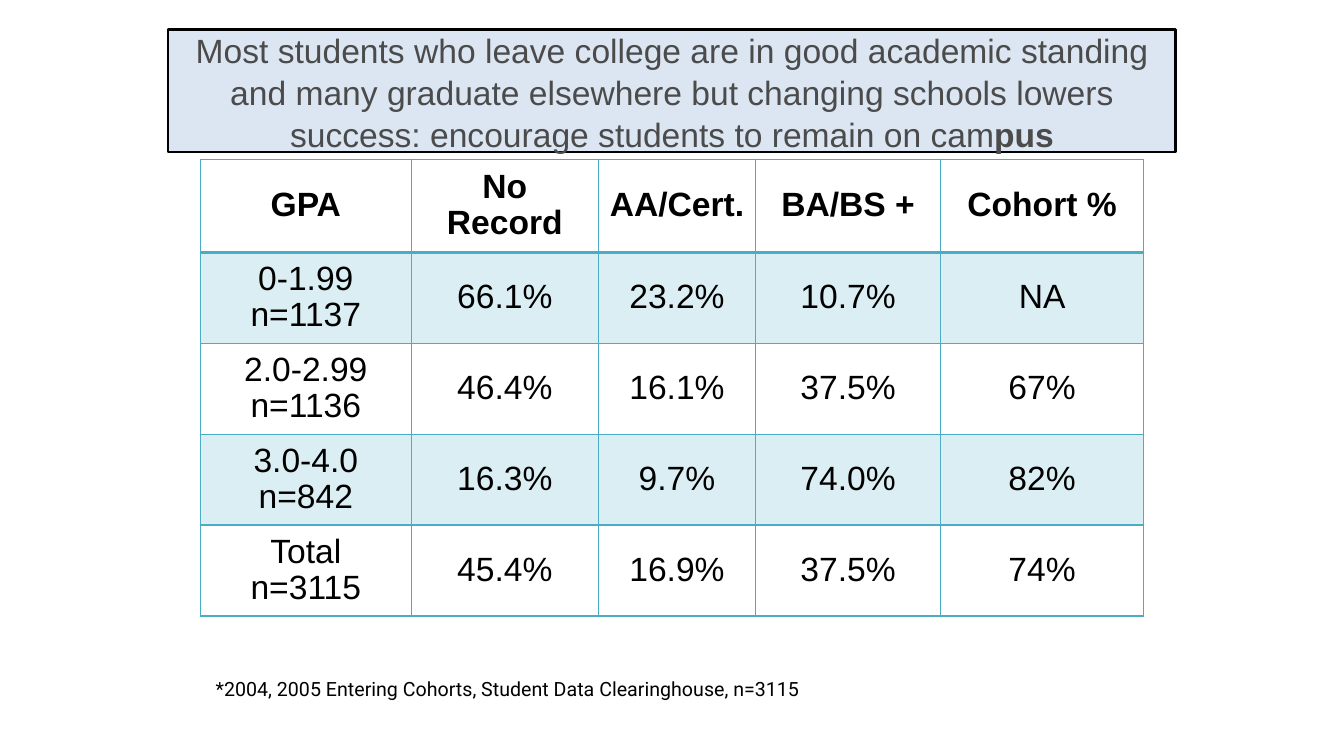
from dataclasses import dataclass

from pptx import Presentation
from pptx import util as u
from pptx.dml.color import RGBColor
from pptx.enum import shapes, text
from pptx.oxml import parse_xml
from pptx.oxml.ns import nsdecls


@dataclass(frozen=True)
class Theme:
    banner: str = "DCE6F2"
    banner_text: str = "4B4B4B"
    ink: str = "000000"
    accent: str = "4BACC6"
    band_alpha: int = 20000
    main_font: str = "Arial"
    note_font: str = "Roboto"
    main_size: int = 24
    note_size: int = 14


theme = Theme()


def add_span(para, words, **formats):
    span = para.add_run()
    span.text = words
    values = {"name": theme.main_font, "size": u.Pt(theme.main_size), "bold": False}
    color = formats.pop("color", theme.ink)
    for name, value in {**values, **formats}.items():
        setattr(span.font, name, value)
    span.font.color.rgb = RGBColor.from_string(color)


def add_border(cell, side, width):
    """Draw one side of a cell: L, R, T or B."""
    cell._tc.get_or_add_tcPr().append(parse_xml(
        f'<a:ln{side} {nsdecls("a")} w="{u.Pt(width)}"><a:solidFill>'
        f'<a:srgbClr val="{theme.accent}"/></a:solidFill></a:ln{side}>'))


deck = Presentation()
deck.slide_width, deck.slide_height = u.Pt(960), u.Pt(540)
page = deck.slides.add_slide(deck.slide_layouts[6])

# Headline banner
banner = page.shapes.add_shape(
    shapes.MSO_SHAPE.RECTANGLE, u.Pt(120), u.Pt(21.3), u.Pt(720), u.Pt(87.3))
banner.shadow.inherit = False
banner.fill.solid()
banner.fill.fore_color.rgb = RGBColor.from_string(theme.banner)
banner.line.color.rgb = RGBColor.from_string(theme.ink)
banner.line.width = u.Pt(2)
frame = banner.text_frame
frame_format = {"margin_left": 0, "margin_top": 0, "margin_right": 0, "margin_bottom": 0,
                "word_wrap": True, "vertical_anchor": text.MSO_ANCHOR.MIDDLE}
for name, value in frame_format.items():
    setattr(frame, name, value)
para = frame.paragraphs[0]
para.alignment = text.PP_ALIGN.CENTER
para.line_spacing = 1.04
add_span(para, "Most students who leave college are in good academic standing and many "
               "graduate elsewhere but changing schools lowers success: encourage "
               "students to remain on cam", color=theme.banner_text)
add_span(para, "pus", color=theme.banner_text, bold=True)

# Outcomes by GPA
outcomes = [
    ["GPA", "No Record", "AA/Cert.", "BA/BS +", "Cohort %"],
    ["0-1.99\nn=1137", "66.1%", "23.2%", "10.7%", "NA"],
    ["2.0-2.99\nn=1136", "46.4%", "16.1%", "37.5%", "67%"],
    ["3.0-4.0\nn=842", "16.3%", "9.7%", "74.0%", "82%"],
    ["Total\nn=3115", "45.4%", "16.9%", "37.5%", "74%"],
]
column_widths = [150.5, 133.8, 112.2, 132.2, 145]
row_heights = [66.6] + [64.9] * 4
table = page.shapes.add_table(
    len(outcomes), len(column_widths), u.Pt(143.2), u.Pt(113.8),
    u.Pt(sum(column_widths)), u.Pt(sum(row_heights))).table
table.first_row = table.horz_banding = False
for column, width in zip(table.columns, column_widths):
    column.width = u.Pt(width)
for row, height in zip(table.rows, row_heights):
    row.height = u.Pt(height)

for r, values in enumerate(outcomes):
    for c, value in enumerate(values):
        cell = table.cell(r, c)
        cell.vertical_anchor = text.MSO_ANCHOR.MIDDLE
        widths = {"L": 1, "R": 1, "T": 2 if r == 1 else 1, "B": 2 if r == 0 else 1}
        for side, width in widths.items():
            add_border(cell, side, width)
        if r % 2:
            cell.fill.solid()
            cell.fill.fore_color.rgb = RGBColor.from_string(theme.accent)
            tint = cell._tc.tcPr.find("{*}solidFill/{*}srgbClr")
            tint.append(parse_xml(f'<a:alpha {nsdecls("a")} val="{theme.band_alpha}"/>'))
        else:
            cell.fill.background()
        for i, words in enumerate(value.split("\n")):
            para = cell.text_frame.add_paragraph() if i else cell.text_frame.paragraphs[0]
            para.alignment = text.PP_ALIGN.CENTER
            para.line_spacing = 0.96
            add_span(para, words, bold=r == 0)

# Data note
note = page.shapes.add_textbox(u.Pt(147), u.Pt(480.2), u.Pt(448.6), u.Pt(24.3))
note.text_frame.word_wrap = True
add_span(note.text_frame.paragraphs[0],
         "*2004, 2005 Entering Cohorts, Student Data Clearinghouse, n=3115",
         name=theme.note_font, size=u.Pt(theme.note_size))

deck.save("out.pptx")
